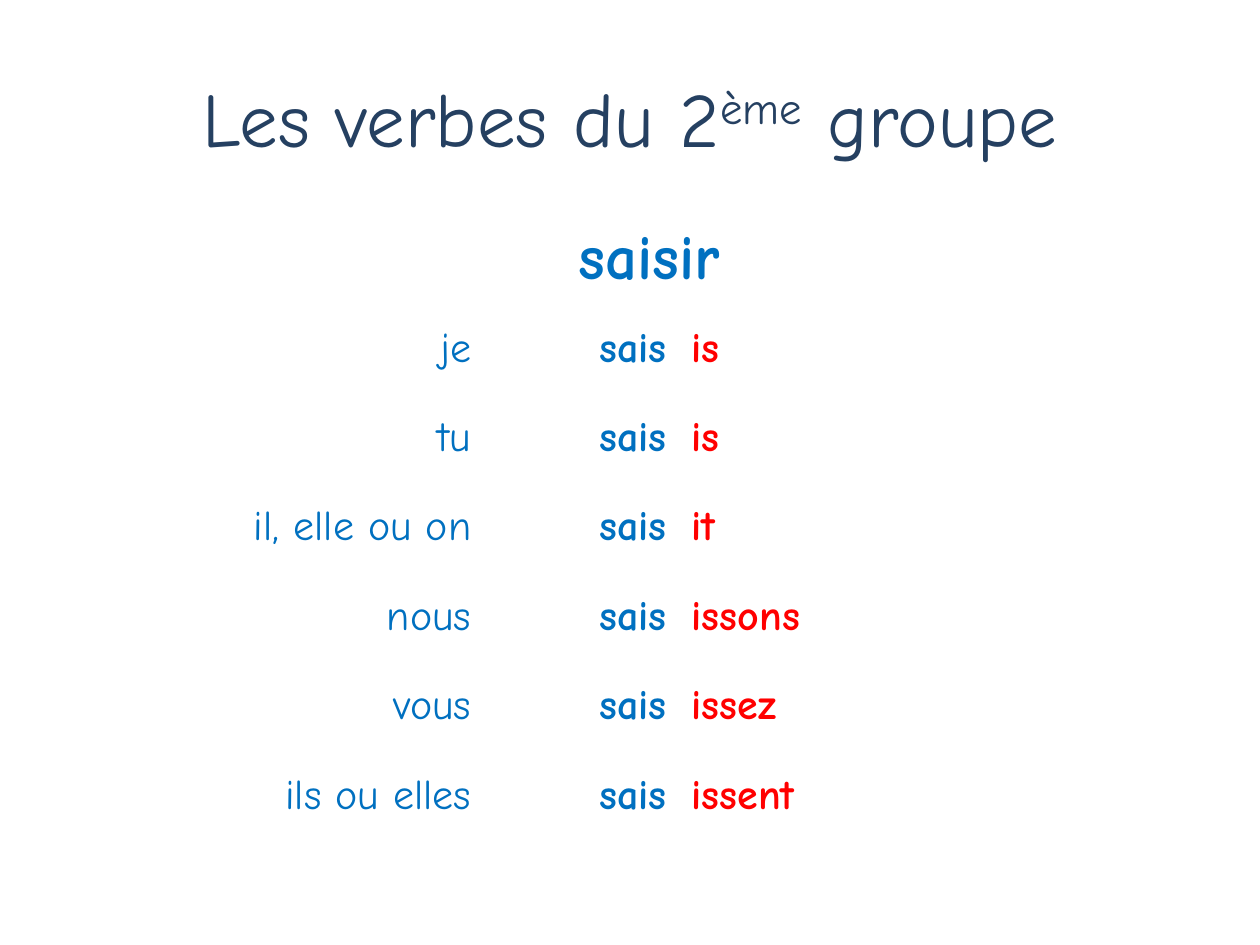
from pptx import Presentation
from pptx.dml.color import RGBColor
from pptx.enum.text import MSO_ANCHOR, PP_ALIGN
from pptx.util import Inches, Pt

COLORS = {"title": "254061", "stem": "0070C0", "ending": "FF0000", "cell": "FFFFFF"}
FONT = "Comic Neue"
COLUMN_WIDTHS = [2.62, 1.55, 3.7]
ROW_HEIGHT = 0.71
VERB = "saisir"
STEM = "sais"
ENDINGS = {
    "je": "is",
    "tu": "is",
    "il, elle ou on": "it",
    "nous": "issons",
    "vous": "issez",
    "ils ou elles": "issent",
}


def add_span(para, text, color, size, bold=False):
    """Add a formatted run to a paragraph and return it."""
    span = para.add_run()
    span.text = text
    for name, value in {"name": FONT, "size": Pt(size), "bold": bold}.items():
        setattr(span.font, name, value)
    span.font.color.rgb = RGBColor.from_string(COLORS[color])
    return span


def fill_cell(cell, text, color, size, bold, align):
    """Write one table cell on a plain background."""
    cell.fill.solid()
    cell.fill.fore_color.rgb = RGBColor.from_string(COLORS["cell"])
    cell.vertical_anchor = MSO_ANCHOR.MIDDLE
    para = cell.text_frame.paragraphs[0]
    para.alignment = align
    add_span(para, text, color, size, bold)


def add_title(page):
    """Place the title with its raised ordinal ending."""
    title = page.shapes.title
    place = {"left": 0.5, "top": 0.3, "width": 9, "height": 1.25}
    for name, value in place.items():
        setattr(title, name, Inches(value))
    title.text_frame.vertical_anchor = MSO_ANCHOR.MIDDLE
    para = title.text_frame.paragraphs[0]
    para.alignment = PP_ALIGN.CENTER
    add_span(para, "Les verbes du 2", "title", 44)
    ordinal = add_span(para, "ème", "title", 44)
    ordinal.font._element.set("baseline", "30000")
    add_span(para, " groupe", "title", 44)


def add_conjugation(page):
    """Build the conjugation table under its merged verb heading."""
    row_count = len(ENDINGS) + 1
    table = page.shapes.add_table(
        row_count, len(COLUMN_WIDTHS), Inches(1.22), Inches(1.7),
        Inches(sum(COLUMN_WIDTHS)), Inches(ROW_HEIGHT * row_count),
    ).table
    table.horz_banding = False
    for column, width in zip(table.columns, COLUMN_WIDTHS):
        column.width = Inches(width)
    heading = table.cell(0, 0)
    heading.merge(table.cell(0, len(COLUMN_WIDTHS) - 1))
    fill_cell(heading, VERB, "stem", 36, True, PP_ALIGN.CENTER)
    for row, (pronoun, ending) in enumerate(ENDINGS.items(), start=1):
        fill_cell(table.cell(row, 0), pronoun, "stem", 24, False, PP_ALIGN.RIGHT)
        fill_cell(table.cell(row, 1), STEM, "stem", 24, True, PP_ALIGN.RIGHT)
        fill_cell(table.cell(row, 2), ending, "ending", 24, True, PP_ALIGN.LEFT)


def main():
    """Create the deck and save it."""
    deck = Presentation()
    deck.slide_width, deck.slide_height = Inches(10), Inches(7.5)
    page = deck.slides.add_slide(deck.slide_layouts.get_by_name("Title Only"))
    add_title(page)
    add_conjugation(page)
    deck.save("out.pptx")


if __name__ == "__main__":
    main()
